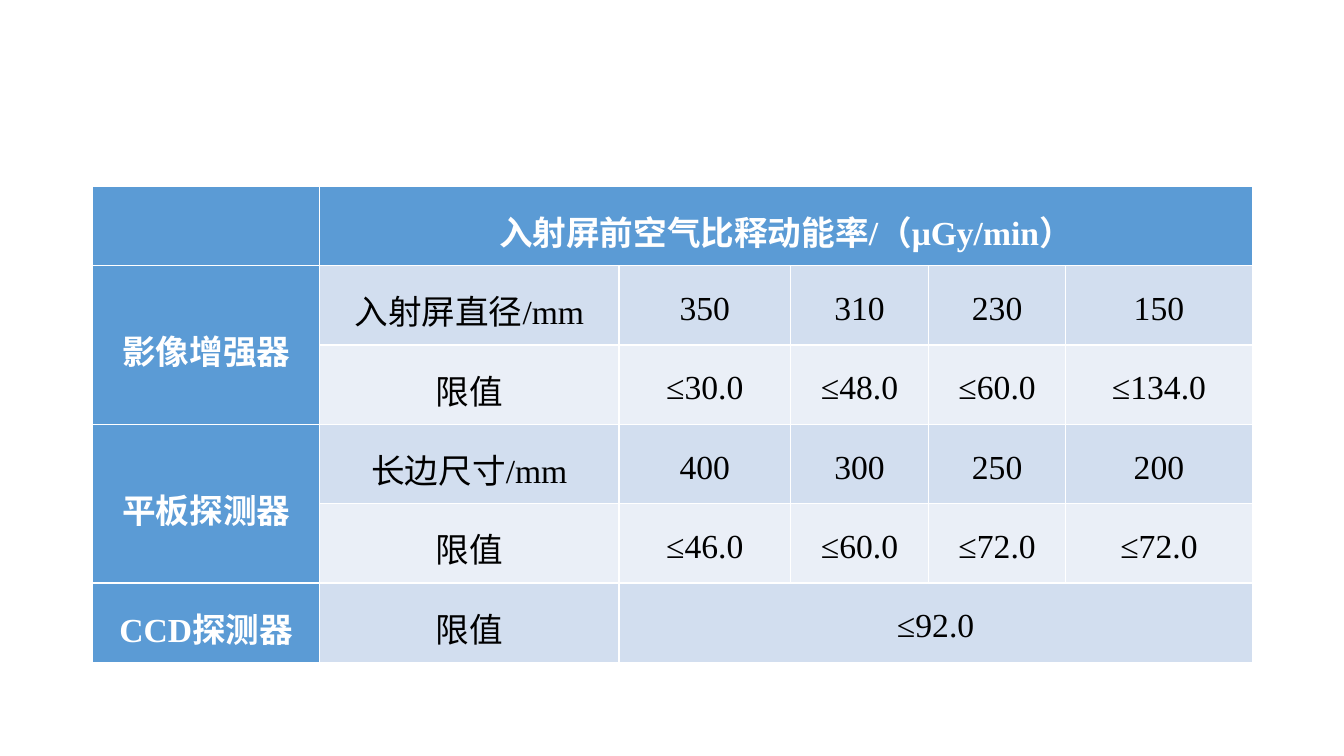
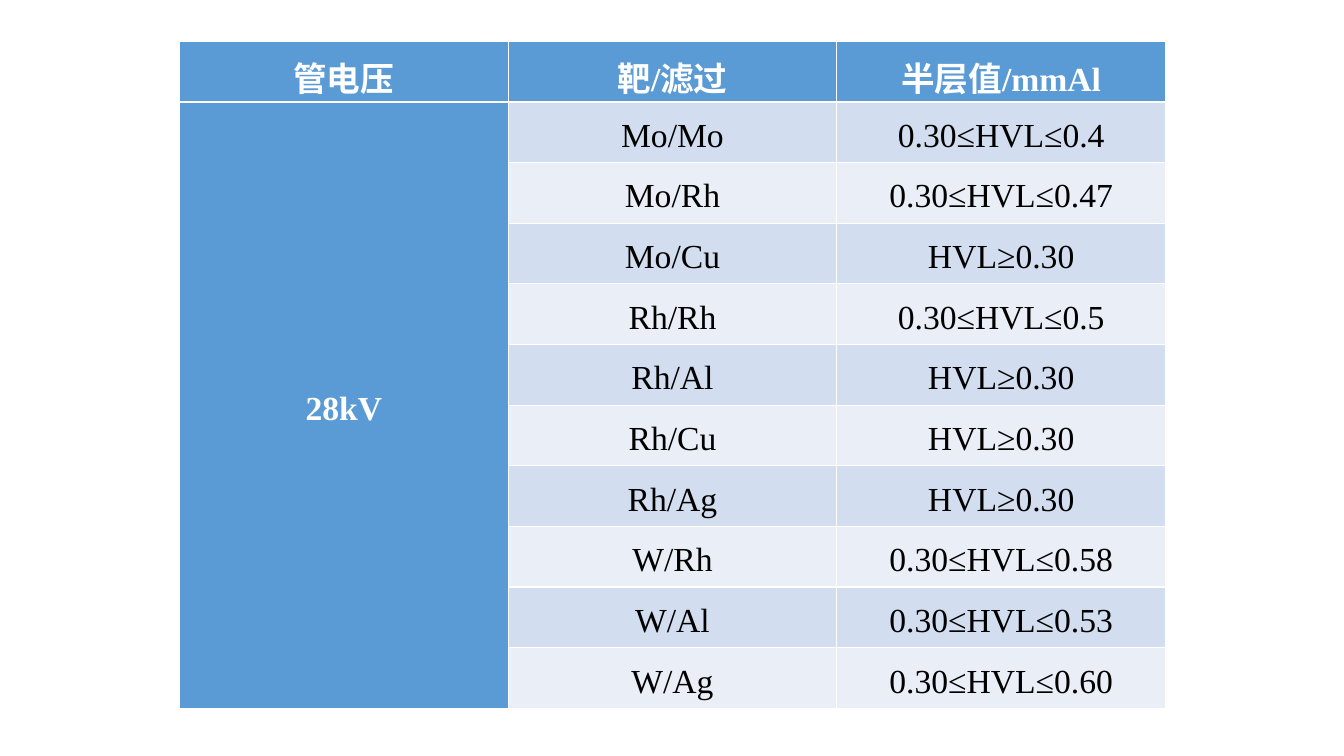
from pptx import Presentation
from pptx.dml.color import RGBColor
from pptx.enum.text import MSO_ANCHOR, PP_ALIGN
from pptx.util import Pt

PX = 9144
CENTER = PP_ALIGN.CENTER
MIDDLE = MSO_ANCHOR.MIDDLE
WHITE = RGBColor(0xFF, 0xFF, 0xFF)
BLACK = RGBColor(0, 0, 0)
BLUE = RGBColor(0x5B, 0x9B, 0xD5)
BANDS = (RGBColor(0xEA, 0xEF, 0xF7), RGBColor(0xD2, 0xDE, 0xEF))
BLANK_LAYOUT = 6

CELL_FORMAT = {
    "margin_left": 7 * PX,
    "margin_right": 7 * PX,
    "margin_top": 0,
    "margin_bottom": 0,
    "vertical_anchor": MIDDLE,
}
PARAGRAPH_FORMAT = {"alignment": CENTER, "line_spacing": 1.2}
FONT_FORMAT = {"name": "Times New Roman", "size": Pt(24)}

KERMA_ROWS = [
    ["", "入射屏前空气比释动能率/（μGy/min）", "", "", "", ""],
    ["影像增强器", "入射屏直径/mm", "350", "310", "230", "150"],
    ["", "限值", "≤30.0", "≤48.0", "≤60.0", "≤134.0"],
    ["平板探测器", "长边尺寸/mm", "400", "300", "250", "200"],
    ["", "限值", "≤46.0", "≤60.0", "≤72.0", "≤72.0"],
    ["CCD探测器", "限值", "≤92.0", "", "", ""],
]
KERMA_MERGES = [(0, 1, 0, 5), (1, 0, 2, 0), (3, 0, 4, 0), (5, 2, 5, 5)]

HVL_LIMITS = [
    ("Mo/Mo", "0.30≤HVL≤0.4"),
    ("Mo/Rh", "0.30≤HVL≤0.47"),
    ("Mo/Cu", "HVL≥0.30"),
    ("Rh/Rh", "0.30≤HVL≤0.5"),
    ("Rh/Al", "HVL≥0.30"),
    ("Rh/Cu", "HVL≥0.30"),
    ("Rh/Ag", "HVL≥0.30"),
    ("W/Rh", "0.30≤HVL≤0.58"),
    ("W/Al", "0.30≤HVL≤0.53"),
    ("W/Ag", "0.30≤HVL≤0.60"),
]
HVL_ROWS = [["管电压", "靶/滤过", "半层值/mmAl"]] + [
    ["" if i else "28kV", *limit] for i, limit in enumerate(HVL_LIMITS)
]
HVL_MERGES = [(1, 0, 10, 0)]


def apply_format(target, values):
    for name, value in values.items():
        setattr(target, name, value)


def format_cell(cell, text, row, col):
    is_header = row == 0 or col == 0
    apply_format(cell, CELL_FORMAT)
    cell.fill.solid()
    cell.fill.fore_color.rgb = BLUE if is_header else BANDS[row % 2]
    p = cell.text_frame.paragraphs[0]
    apply_format(p, PARAGRAPH_FORMAT)
    if text:
        r = p.add_run()
        r.text = text
        apply_format(r.font, FONT_FORMAT)
        r.font.bold = is_header
        r.font.color.rgb = WHITE if is_header else BLACK


def add_table_slide(prs, rows, merges, left, top, widths, height):
    s = prs.slides.add_slide(prs.slide_layouts[BLANK_LAYOUT])
    frame = s.shapes.add_table(
        len(rows), len(widths), left * PX, top * PX, sum(widths) * PX, height * PX
    )
    table = frame.table
    table.first_col = True
    for column, width in zip(table.columns, widths):
        column.width = width * PX
    for i, row in enumerate(rows):
        for j, text in enumerate(row):
            format_cell(table.cell(i, j), text, i, j)
    for first_row, first_col, last_row, last_col in merges:
        table.cell(first_row, first_col).merge(table.cell(last_row, last_col))


def main():
    prs = Presentation()
    prs.slide_width = 1333 * PX
    prs.slide_height = 750 * PX
    add_table_slide(
        prs, KERMA_ROWS, KERMA_MERGES, 92, 185, [225, 297, 170, 137, 136, 185], 472
    )
    add_table_slide(prs, HVL_ROWS, HVL_MERGES, 178, 41, [326] * 3, 662)
    prs.save("out.pptx")


if __name__ == "__main__":
    main()
